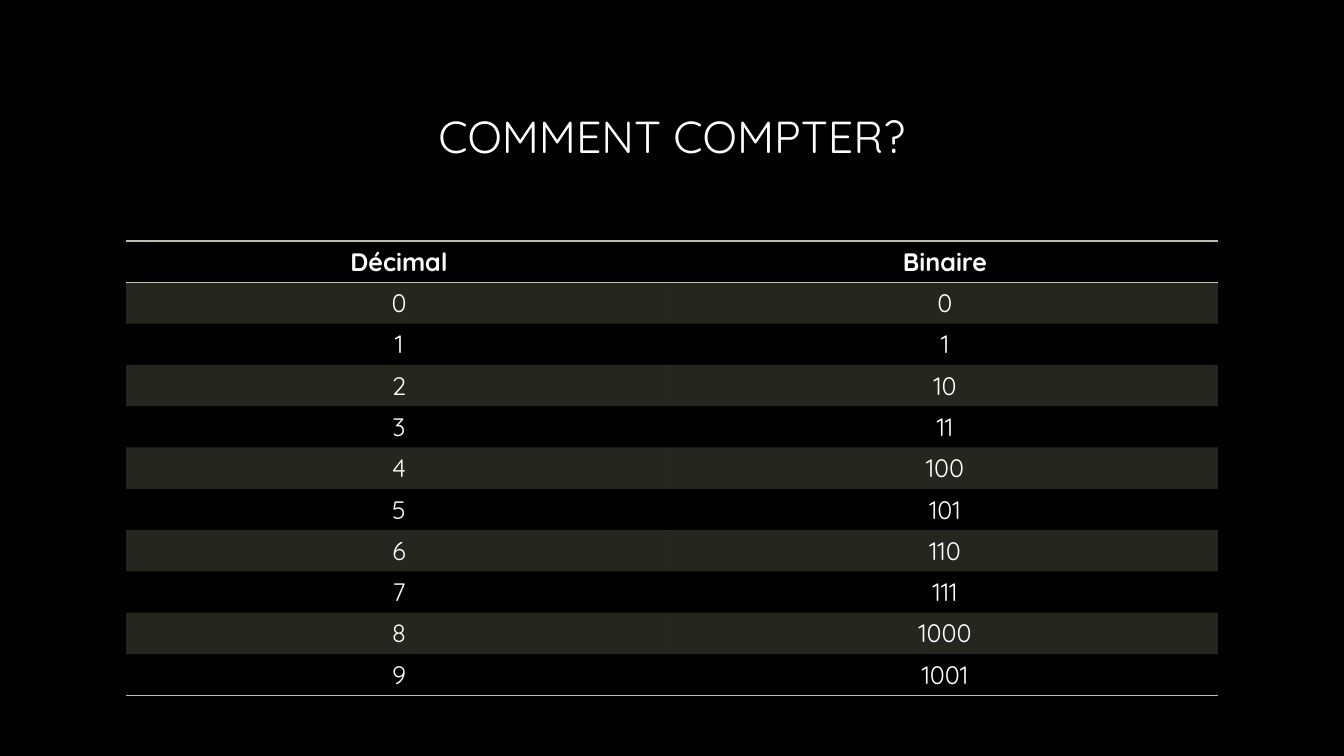
"""Build a slide that counts from 0 to 9 in decimal and binary."""
from lxml.etree import SubElement
from pptx import Presentation
from pptx.dml.color import RGBColor
from pptx.enum.text import MSO_ANCHOR, PP_ALIGN
from pptx.oxml.ns import qn
from pptx.util import Inches, Pt

BLACK = RGBColor(0x00, 0x00, 0x00)
WHITE = RGBColor(0xFF, 0xFF, 0xFF)
SAGE = RGBColor(0xBF, 0xBF, 0xA5)
FONT = "Quicksand"
PLAIN_STYLE = "{2D5ABB26-0587-4C30-8999-92F81FD0307C}"
LEFT, WIDTH, ROW_HEIGHT = 1.25, 10.83, 0.41
HEADINGS = ("Décimal", "Binaire")
COUNT = 10


def write_text(frame, text, size, bold=False):
    """Write one centred white line into a text frame."""
    paragraph = frame.paragraphs[0]
    paragraph.alignment = PP_ALIGN.CENTER
    run = paragraph.add_run()
    run.text = text
    formats = {"name": FONT, "size": Pt(size), "bold": bold}
    for attribute, value in formats.items():
        setattr(run.font, attribute, value)
    run.font.color.rgb = WHITE


def add_title(slide, text):
    """Add the slide title, centred in its box."""
    title = slide.shapes.add_textbox(
        Inches(LEFT), Inches(0.31), Inches(WIDTH), Inches(2.08))
    formats = {"word_wrap": True, "vertical_anchor": MSO_ANCHOR.MIDDLE}
    for attribute, value in formats.items():
        setattr(title.text_frame, attribute, value)
    write_text(title.text_frame, text, 32)


def add_rule(cell, side):
    """Draw a thin sage border on one side of a cell."""
    properties = cell._tc.get_or_add_tcPr()
    rule = SubElement(properties, qn(f"a:{side}"), w=str(Pt(1)))
    solid = SubElement(rule, qn("a:solidFill"))
    SubElement(solid, qn("a:srgbClr"), val=str(SAGE))


def shade(cell):
    """Fill a cell with sage at 20 percent opacity."""
    cell.fill.solid()
    cell.fill.fore_color.rgb = SAGE
    color = cell._tc.tcPr.find(f".//{qn('a:solidFill')}/{qn('a:srgbClr')}")
    SubElement(color, qn("a:alpha"), val="20000")


def add_counting_table(slide):
    """Add the table of decimal numbers and their binary forms."""
    rows = [HEADINGS] + [(str(n), f"{n:b}") for n in range(COUNT)]
    table = slide.shapes.add_table(
        len(rows), len(HEADINGS), Inches(LEFT), Inches(2.39),
        Inches(WIDTH), Inches(ROW_HEIGHT * len(rows))).table
    table._tbl.tblPr.find(qn("a:tableStyleId")).text = PLAIN_STYLE
    ruled_sides = {0: ("lnT", "lnB"), COUNT: ("lnB",)}
    for row, values in enumerate(rows):
        for column, value in enumerate(values):
            cell = table.cell(row, column)
            write_text(cell.text_frame, value, 18, bold=row == 0)
            for side in ruled_sides.get(row, ()):
                add_rule(cell, side)
            if row % 2:
                shade(cell)
            else:
                cell.fill.background()


def main():
    """Create the slide and save it."""
    deck = Presentation()
    deck.slide_width, deck.slide_height = Inches(13.33), Inches(7.5)
    slide = deck.slides.add_slide(deck.slide_layouts[6])
    slide.background.fill.solid()
    slide.background.fill.fore_color.rgb = BLACK
    add_title(slide, "COMMENT COMPTER?")
    add_counting_table(slide)
    deck.save("out.pptx")


if __name__ == "__main__":
    main()
